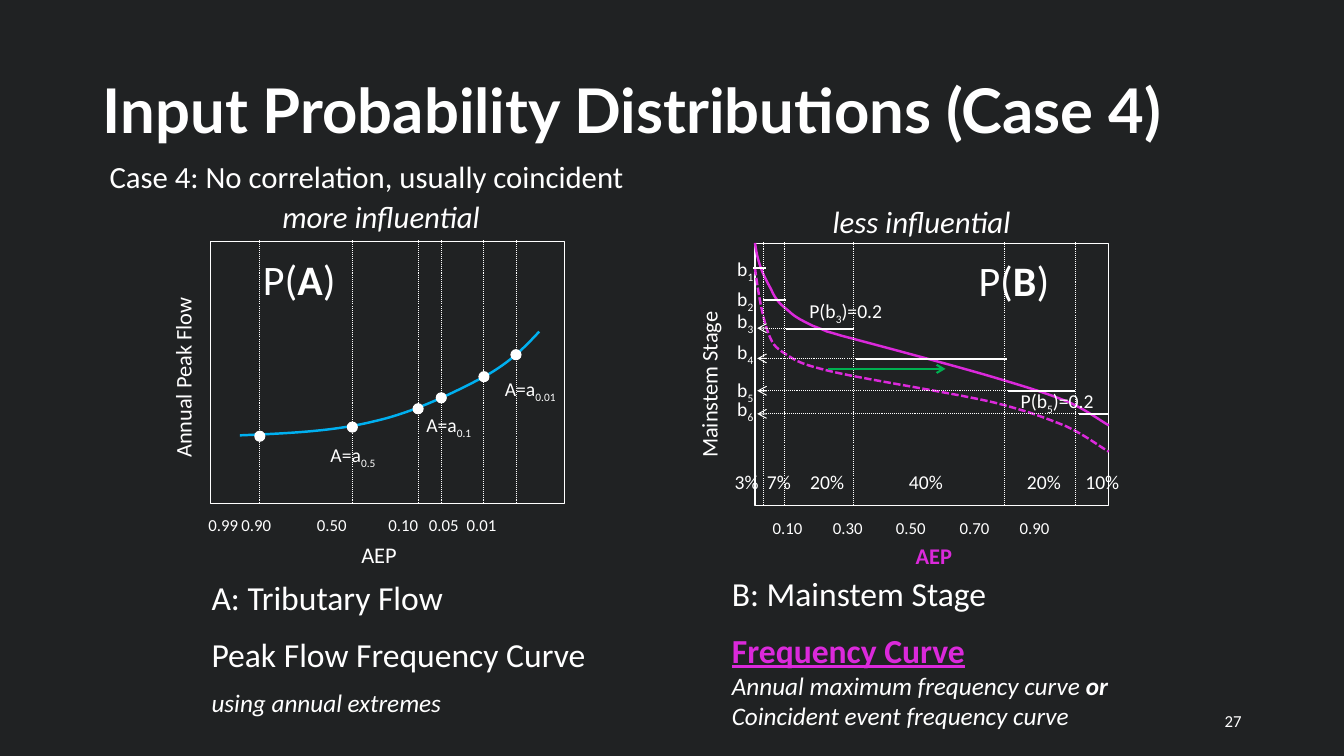
from dataclasses import dataclass
from lxml import etree
from pptx import Presentation
from pptx.dml.color import RGBColor
from pptx.enum.dml import MSO_LINE
from pptx.enum.shapes import MSO_CONNECTOR, MSO_SHAPE
from pptx.enum.text import MSO_ANCHOR, MSO_AUTO_SIZE, PP_ALIGN
from pptx.oxml.ns import qn
from pptx.util import Pt

DOTTED, DASHED = MSO_LINE.ROUND_DOT, MSO_LINE.SQUARE_DOT
LEFT, CENTER, RIGHT = PP_ALIGN.LEFT, PP_ALIGN.CENTER, PP_ALIGN.RIGHT
MIDDLE, TOP = MSO_ANCHOR.MIDDLE, MSO_ANCHOR.TOP
STRAIGHT = MSO_CONNECTOR.STRAIGHT
RECTANGLE, OVAL = MSO_SHAPE.RECTANGLE, MSO_SHAPE.OVAL
NO_FIT = MSO_AUTO_SIZE.NONE
COLORS = {"background": "202223", "white": "FFFFFF", "flow": "00B0F0",
          "stage": "DB29DB", "shift": "00B050"}


@dataclass
class Piece:
    text: str
    bold: bool = False
    italic: bool = False
    underline: bool = False
    subscript: bool = False
    color: str = "white"


@dataclass
class Line:
    pieces: list[Piece]
    size: float
    before: float = 0


@dataclass
class Label:
    left: float
    top: float
    width: float
    height: float
    lines: list[Line]
    align: int = LEFT
    anchor: int = TOP
    rotation: float = 0
    tabs: tuple[float, ...] = ()


@dataclass
class Band:
    number: str
    start: float
    end: float
    level: float
    name_top: float
    share: str
    share_left: float
    arrow: bool = True


@dataclass
class Curve:
    color: str
    points: list[tuple[float, float]]
    dash: int | None = None


def rgb(name: str) -> RGBColor:
    return RGBColor.from_string(COLORS[name])


def draw_label(slide, label: Label) -> None:
    box = slide.shapes.add_textbox(Pt(label.left), Pt(label.top), Pt(label.width), Pt(label.height))
    box.rotation = label.rotation
    frame = box.text_frame
    frame.word_wrap = True
    frame.vertical_anchor = label.anchor
    for index, line in enumerate(label.lines):
        paragraph = frame.add_paragraph() if index else frame.paragraphs[0]
        paragraph.text = line.pieces[0].text
        for piece in line.pieces[1:]:
            paragraph.add_run().text = piece.text
        paragraph.alignment = label.align
        if line.before:
            paragraph.space_before = Pt(line.before)
        if label.tabs:
            stops = etree.SubElement(paragraph._p.get_or_add_pPr(), qn("a:tabLst"))
            for position in label.tabs:
                etree.SubElement(stops, qn("a:tab"), pos=str(Pt(position)), algn="l")
        for run, piece in zip(paragraph.runs, line.pieces):
            font = run.font
            font.name, font.size = "Calibri", Pt(line.size)
            font.bold, font.italic, font.underline = piece.bold, piece.italic, piece.underline
            font.color.rgb = rgb(piece.color)
            if piece.subscript:
                run._r.get_or_add_rPr().set("baseline", "-25000")


def write(slide, left: float, top: float, width: float, height: float, size: float,
          *pieces: Piece, **options) -> None:
    draw_label(slide, Label(left, top, width, height, [Line(list(pieces), size)], **options))


def draw_line(slide, x1: float, y1: float, x2: float, y2: float, color: str = "white",
              weight: float = 1.5, dash: int | None = None, arrow: bool = False) -> None:
    connector = slide.shapes.add_connector(STRAIGHT, Pt(x1), Pt(y1), Pt(x2), Pt(y2))
    connector.line.color.rgb = rgb(color)
    connector.line.width = Pt(weight)
    if dash:
        connector.line.dash_style = dash
    if arrow:
        etree.SubElement(connector.line._get_or_add_ln(), qn("a:tailEnd"), type="arrow")
    etree.SubElement(connector._element.spPr, qn("a:effectLst"))


def draw_shape(slide, kind: int, left: float, top: float, width: float, height: float,
               filled: bool = False) -> None:
    shape = slide.shapes.add_shape(kind, Pt(left), Pt(top), Pt(width), Pt(height))
    shape.shadow.inherit = False
    if filled:
        shape.fill.solid()
        shape.fill.fore_color.rgb = rgb("white")
    else:
        shape.fill.background()
    shape.line.color.rgb = rgb("white")
    shape.line.width = Pt(0.75)


def draw_curve(slide, curve: Curve) -> None:
    start, *rest = [(Pt(x), Pt(y)) for x, y in curve.points]
    builder = slide.shapes.build_freeform(*start)
    builder.add_line_segments(rest, close=False)
    shape = builder.convert_to_shape()
    segments = list(shape._element.iter(qn("a:lnTo")))
    for first in range(0, len(segments), 3):
        bend, *others = segments[first:first + 3]
        bend.tag = qn("a:cubicBezTo")
        for other in others:
            bend.append(other[0])
            other.getparent().remove(other)
    shape.shadow.inherit = False
    shape.fill.background()
    shape.line.color.rgb = rgb(curve.color)
    shape.line.width = Pt(1.75)
    if curve.dash:
        shape.line.dash_style = curve.dash


FLOW = Curve("flow", [
    (171.4, 311), (204.5, 309.6), (238.3, 308.2), (267.1, 301), (296.6, 294.5),
    (326.2, 279.4), (345.6, 269.3), (365, 258.5), (375.1, 247.7), (385.2, 236.9)])
ANNUAL_STAGE = Curve("stage", [
    (539.3, 173.5), (541.4, 190.1), (546.5, 198.7), (550.8, 206.6), (554.4, 215.3),
    (558.7, 218.2), (563.8, 222.5), (568.1, 226.8), (574.6, 229.7), (580.3, 232.6),
    (601.2, 240.5), (579.6, 233.3), (601.2, 239.8), (622.8, 245.5), (682.6, 261.4),
    (709.2, 269.3), (735.8, 277.2), (747.4, 280.8), (761.8, 286.6), (775.4, 292.3),
    (785.5, 300.2), (792, 303.8)])
COINCIDENT_STAGE = Curve("stage", [
    (539.3, 191.5), (541.4, 208.1), (544.3, 224.6), (547.9, 235.4), (551.5, 245.5),
    (553, 247.7), (560.9, 252.7), (568.8, 257.8), (571, 259.9), (595.4, 265.7),
    (620.6, 271.4), (681.1, 280.8), (709.2, 287.3), (735.1, 293.8), (747.4, 298.8),
    (761.8, 304.6), (775.4, 311), (785.5, 319), (792, 322.6)], DASHED)
FLOW_SAMPLES = [(185.6, 311.6), (251.7, 305.1), (298.7, 292), (315.2, 284.2),
                (345.7, 269.1), (368.6, 253.4)]
FLOW_NAMES = [("0.01", 353.5, 265.7), ("0.5", 229, 313), ("0.1", 297.4, 291.6)]
BAND_LIMITS = (545.6, 560.7, 609.8, 717.8, 768.2)
BANDS = [
    Band("1", 537.8, 547.2, 191.5, 180, "3%", 517.7, False),
    Band("2", 545, 561.6, 214.6, 201.6, "7%", 540.7, False),
    Band("3", 561.6, 609.8, 234.7, 217.4, "20%", 571.7),
    Band("4", 611.3, 719.3, 256.3, 239.6, "40%", 642.2),
    Band("5", 720, 768.2, 279.4, 266.4, "20%", 726.5),
    Band("6", 770.4, 792, 295.9, 280.1, "10%", 768.2)]
BAND_CHANCES = [("3", 571, 210.2), ("5", 722, 274.3)]
SUMMARIES = [
    Label(144, 408.5, 351.4, 113, [
        Line([Piece("A: Tributary Flow")], 24),
        Line([Piece("Peak Flow Frequency Curve")], 24, 12),
        Line([Piece("using annual extremes", italic=True)], 18, 9)]),
    Label(515.7, 405.4, 335.5, 123.8, [
        Line([Piece("B: Mainstem Stage")], 24),
        Line([Piece("Frequency Curve", bold=True, underline=True, color="stage")], 24, 12),
        Line([Piece("Annual maximum frequency curve ", italic=True),
              Piece("or", bold=True, italic=True)], 18),
        Line([Piece("Coincident event frequency curve", italic=True)], 18)])]


def draw_title(slide) -> None:
    title = slide.shapes.title
    title.left, title.top, title.width, title.height = Pt(66.2), Pt(28.8), Pt(828), Pt(104.4)
    frame = title.text_frame
    frame.text = "Input Probability Distributions (Case 4)"
    frame.auto_size, frame.word_wrap, frame.vertical_anchor = NO_FIT, True, MIDDLE
    paragraph = frame.paragraphs[0]
    paragraph.alignment, paragraph.line_spacing = LEFT, 0.9
    font = paragraph.runs[0].font
    font.name, font.size, font.bold = "Lato", Pt(44), True
    font.color.rgb = rgb("white")


def draw_flow_plot(slide) -> None:
    draw_shape(slide, RECTANGLE, 150.5, 172.3, 252.7, 187.7)
    draw_curve(slide, FLOW)
    for x, y in FLOW_SAMPLES:
        draw_line(slide, x, 359, x, 171.5, weight=0.75, dash=DOTTED)
        draw_shape(slide, OVAL, x - 3.6, y - 3.6, 7.2, 7.2, filled=True)
    for chance, left, top in FLOW_NAMES:
        write(slide, left, top, 80, 23.8, 14, Piece("A=a"), Piece(chance, subscript=True))
    write(slide, 180.7, 177.8, 112.3, 43.2, 30, Piece("P("), Piece("A", bold=True), Piece(")"))
    write(slide, 175, 137.5, 194.4, 33.8, 22, Piece("more influential", italic=True), align=CENTER)
    write(slide, 46.1, 236.2, 169.2, 26.6, 16, Piece("Annual Peak Flow"), rotation=270)
    write(slide, 141.8, 364.3, 279.4, 21.6, 12, Piece("0.99\t0.90\t0.50\t0.10\t0.05\t0.01"),
          tabs=(23.5, 77.5, 128.5, 157.5, 184.5))
    write(slide, 142.6, 383, 256.3, 26.6, 16, Piece("AEP"), align=CENTER)


def draw_stage_plot(slide) -> None:
    draw_shape(slide, RECTANGLE, 539.3, 173.8, 252.7, 187.4)
    for curve in (ANNUAL_STAGE, COINCIDENT_STAGE):
        draw_curve(slide, curve)
    for x in BAND_LIMITS:
        draw_line(slide, x, 361, x, 173, weight=0.75, dash=DOTTED)
    for band in BANDS:
        draw_line(slide, band.start, band.level, band.end, band.level)
        if band.arrow:
            draw_line(slide, band.start, band.level - 0.3, 540.9, band.level - 0.3,
                      weight=0.75, dash=DOTTED, arrow=True)
        write(slide, 519.5, band.name_top, 30, 23.8, 14,
              Piece("b"), Piece(band.number, subscript=True))
        write(slide, band.share_left, 331.9, 48.2, 23.8, 14, Piece(band.share))
    for number, left, top in BAND_CHANCES:
        write(slide, left, top, 97.2, 23.8, 14,
              Piece("P(b"), Piece(number, subscript=True), Piece(")=0.2"))
    draw_line(slide, 591.8, 263.5, 675.4, 263.5, color="shift", arrow=True)
    write(slide, 691.9, 178.6, 112.3, 43.2, 30, Piece("P("), Piece("B", bold=True), Piece(")"))
    write(slide, 587.7, 141.1, 194.4, 33.8, 22, Piece("less influential", italic=True))
    write(slide, 434.7, 249.1, 143.3, 26.6, 16, Piece("Mainstem Stage"), rotation=270)
    write(slide, 544.8, 366.1, 279.4, 21.6, 12, Piece("0.10\t0.30\t0.50\t0.70\t0.90"),
          tabs=(43, 88, 133.5, 176.5))
    write(slide, 534.5, 383.8, 265, 26.6, 16, Piece("AEP", bold=True, color="stage"), align=CENTER)


def main() -> None:
    deck = Presentation()
    deck.slide_width, deck.slide_height = Pt(960), Pt(540)
    slide = deck.slides.add_slide(deck.slide_layouts[5])
    slide.background.fill.solid()
    slide.background.fill.fore_color.rgb = rgb("background")
    draw_title(slide)
    write(slide, 71.2, 109, 537.1, 33.8, 22, Piece("Case 4: No correlation, usually coincident"))
    draw_flow_plot(slide)
    draw_stage_plot(slide)
    for summary in SUMMARIES:
        draw_label(slide, summary)
    write(slide, 678, 500.4, 216, 28.8, 12, Piece("27"), align=RIGHT, anchor=MIDDLE)
    deck.save("out.pptx")


if __name__ == "__main__":
    main()
